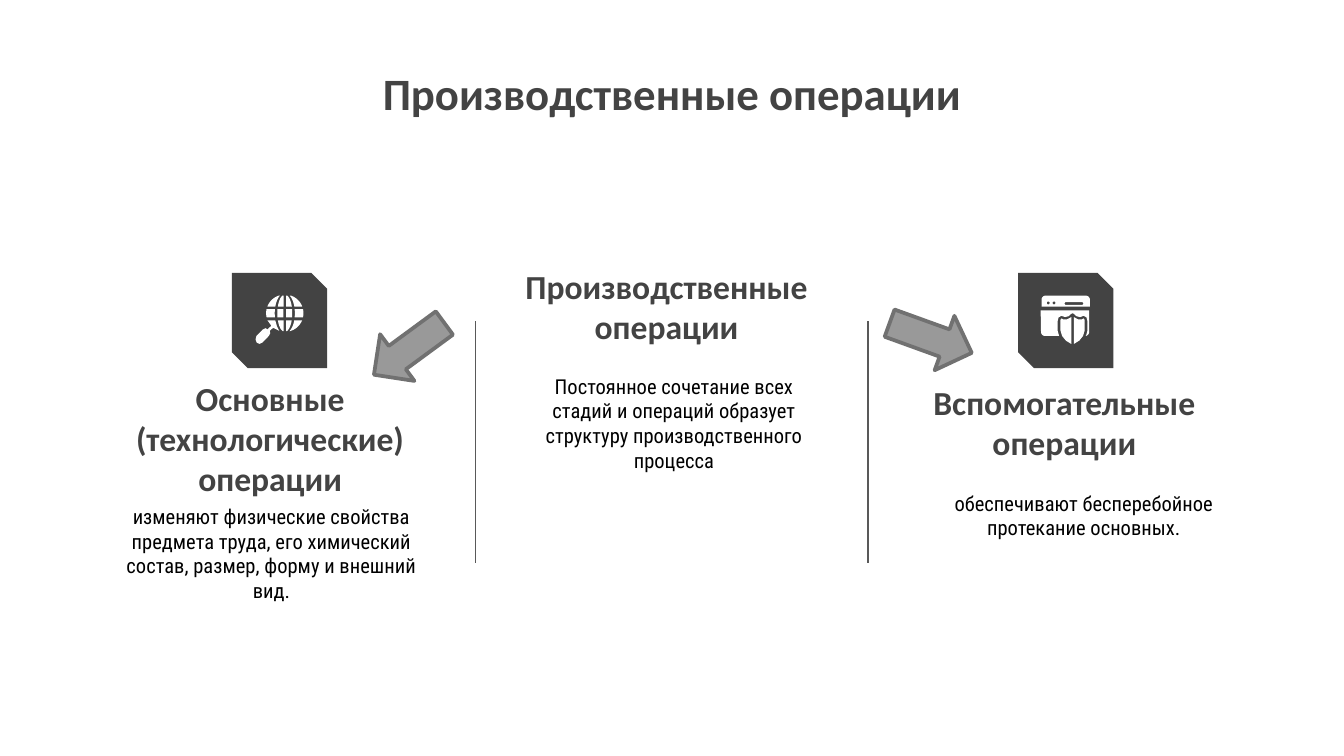
import math
import pptx
import pptx.dml.color
import pptx.enum.shapes
import pptx.enum.text
import pptx.util
from lxml import etree

Pt = pptx.util.Pt
RGB = pptx.dml.color.RGBColor.from_string
MSO_SHAPE = pptx.enum.shapes.MSO_SHAPE
ANCHOR = pptx.enum.text.MSO_ANCHOR

theme = {
    "dark": RGB("434343"),
    "icon": RGB("FFFFFF"),
    "divider": RGB("595959"),
    "arrow": RGB("999999"),
    "arrow_edge": RGB("717171"),
    "title": {"name": "Calibri", "size": Pt(24), "bold": True},
    "heading": {"name": "Calibri", "size": Pt(18), "bold": True},
    "body": {"name": "Roboto Condensed", "size": Pt(11), "bold": False},
    "text_colors": {"title": RGB("434343"), "heading": RGB("434343"), "body": RGB("000000")},
}

presentation = pptx.Presentation()
presentation.slide_width = Pt(720)
presentation.slide_height = Pt(405)
slide = presentation.slides.add_slide(presentation.slide_layouts[6])
shapes = slide.shapes


def arc(center_x, center_y, radius, start, end):
    angles = [math.radians(start + (end - start) * step / 12) for step in range(13)]
    return [(center_x + radius * math.cos(a), center_y + radius * math.sin(a)) for a in angles]


def draw_icon_part(*contours):
    outlines = [[(x * 100, y * 100) for x, y in contour] for contour in contours]
    builder = shapes.build_freeform(*outlines[0][0], scale=127)
    for index, outline in enumerate(outlines):
        if index:
            builder.move_to(*outline[0])
        builder.add_line_segments(outline[1:], close=True)
    shape = builder.convert_to_shape()
    shape.shadow.inherit = False
    shape.fill.solid()
    shape.fill.fore_color.rgb = theme["icon"]
    shape.line.fill.background()


texts = [
    ("title", "Производственные операции", 154.8, 28.1, 410.4, 74.2),
    ("heading", "Основные (технологические)\vоперации", 27.4, 240.5, 234.7, 33.8),
    ("body", "изменяют физические свойства предмета труда, его химический состав, размер, "
             "форму и внешний вид.", 54.7, 262.8, 181.4, 79.2),
    ("heading", "Производственные операции", 252, 159.1, 210.2, 33.8),
    ("body", "Постоянное сочетание всех стадий и операций образует структуру "
             "производственного процесса", 273.6, 193, 175, 79.2),
    ("heading", "Вспомогательные операции", 465.1, 221, 210.2, 33.8),
    ("body", "обеспечивают бесперебойное протекание основных.", 483.1, 255.6, 195.1, 79.2),
]
for style, text, left, top, width, height in texts:
    text_frame = shapes.add_textbox(Pt(left), Pt(top), Pt(width), Pt(height)).text_frame
    frame_format = {
        "word_wrap": True,
        "vertical_anchor": ANCHOR.BOTTOM if style == "heading" else ANCHOR.TOP,
        **{f"margin_{side}": Pt(7.2) for side in ("left", "top", "right", "bottom")},
    }
    for attribute, value in frame_format.items():
        setattr(text_frame, attribute, value)
    paragraph = text_frame.paragraphs[0]
    paragraph.text = text
    paragraph.alignment = pptx.enum.text.PP_ALIGN.CENTER
    for run in paragraph.runs:
        for attribute, value in theme[style].items():
            setattr(run.font, attribute, value)
        run.font.color.rgb = theme["text_colors"][style]

for x in (254.9, 465.1):
    divider = shapes.add_connector(
        pptx.enum.shapes.MSO_CONNECTOR.STRAIGHT, Pt(x), Pt(172.1), Pt(x), Pt(301.7))
    divider.line.color.rgb = theme["divider"]
    divider.line.width = Pt(0.75)
    namespace = "http://schemas.openxmlformats.org/drawingml/2006/main"
    etree.SubElement(divider._element.spPr, f"{{{namespace}}}effectLst")

for left in (124.2, 545.4):
    tile = shapes.add_shape(MSO_SHAPE.SNIP_2_DIAG_RECTANGLE, Pt(left), Pt(146.2), Pt(51), Pt(51))
    tile.shadow.inherit = False
    tile.fill.solid()
    tile.fill.fore_color.rgb = theme["dark"]
    tile.line.fill.background()

globe_x, globe_y = 152.6, 167.8
meridian_in, meridian_out, rim = (4, 10), (5.4, 10.8), (10, 10)
for top, bottom in ((-9.4, -3.6), (-2.2, 2.2), (3.8, 9.6)):
    heights = [top + (bottom - top) * step / 8 for step in range(9)]
    for side in (-1, 1):
        for inner, outer in (((0.7, None), meridian_in), (meridian_out, rim)):
            if top > 0 and side < 0 and outer == rim:
                continue
            edges = []
            for half_width, half_height in (inner, outer):
                edges.append([
                    (globe_x + side * half_width
                     * (math.sqrt(1 - (y / half_height) ** 2) if half_height else 1), globe_y + y)
                    for y in heights])
            draw_icon_part(edges[0] + edges[1][::-1])

draw_icon_part(
    [(143.3, 171.6), (145.4, 174.5), (143.3, 176.5), (142.3, 175.8), (140.8, 176.5),
     (137.4, 180), (136.9, 181.9), (137.6, 183.6), (139, 184.2), (140.5, 183.6),
     (144, 180), (144.8, 178.6), (144.6, 177.2), (146.3, 175.6), (149.6, 177.2),
     (148.4, 174.8), (147.5, 171.6)])

draw_icon_part(
    [(558, 164.2), *arc(560.2, 160.6, 2.2, 180, 270), *arc(581.7, 160.6, 2.2, 270, 360),
     (583.9, 164.2)],
    arc(561.6, 162.3, 0.8, 0, 360),
    arc(564.7, 162.3, 0.8, 0, 360),
    arc(571, 162.6, 0.7, 90, 270) + arc(579.7, 162.6, 0.7, -90, 90))

shield_x = 574.6
notch = [(7.2, 180), (8, 177.1), (8, 172.1), (7.5, 170.1), (6, 169.2),
         (4, 169.9), (2.1, 169.4), (0.7, 168.1), (0, 167.8)]
draw_icon_part(
    [(557.5, 166.3), *arc(559.9, 177.8, 2.2, 180, 90)]
    + [(shield_x - x, y) for x, y in notch]
    + [(shield_x + x, y) for x, y in notch[-2::-1]]
    + [*arc(581.3, 177.8, 2.2, 90, 0), (583.5, 166.3)])

shield_half = [(0.7, 169.9), (3.1, 171.2), (5, 171.2), (5.8, 170.6), (6.5, 171.4),
               (6.5, 177), (5.6, 180), (3.6, 182.5), (0.7, 184.3)]
for side in (-1, 1):
    draw_icon_part([(shield_x + side * x, y) for x, y in shield_half])

for left, top, rotation in ((195.8, 171.4, 143.7), (475.2, 165.6, 19.9)):
    arrow = shapes.add_shape(MSO_SHAPE.RIGHT_ARROW, Pt(left), Pt(top), Pt(46.8), Pt(31))
    arrow.rotation = rotation
    arrow.shadow.inherit = False
    arrow.fill.solid()
    arrow.fill.fore_color.rgb = theme["arrow"]
    arrow.line.color.rgb = theme["arrow_edge"]
    arrow.line.width = Pt(2)

presentation.save("out.pptx")
